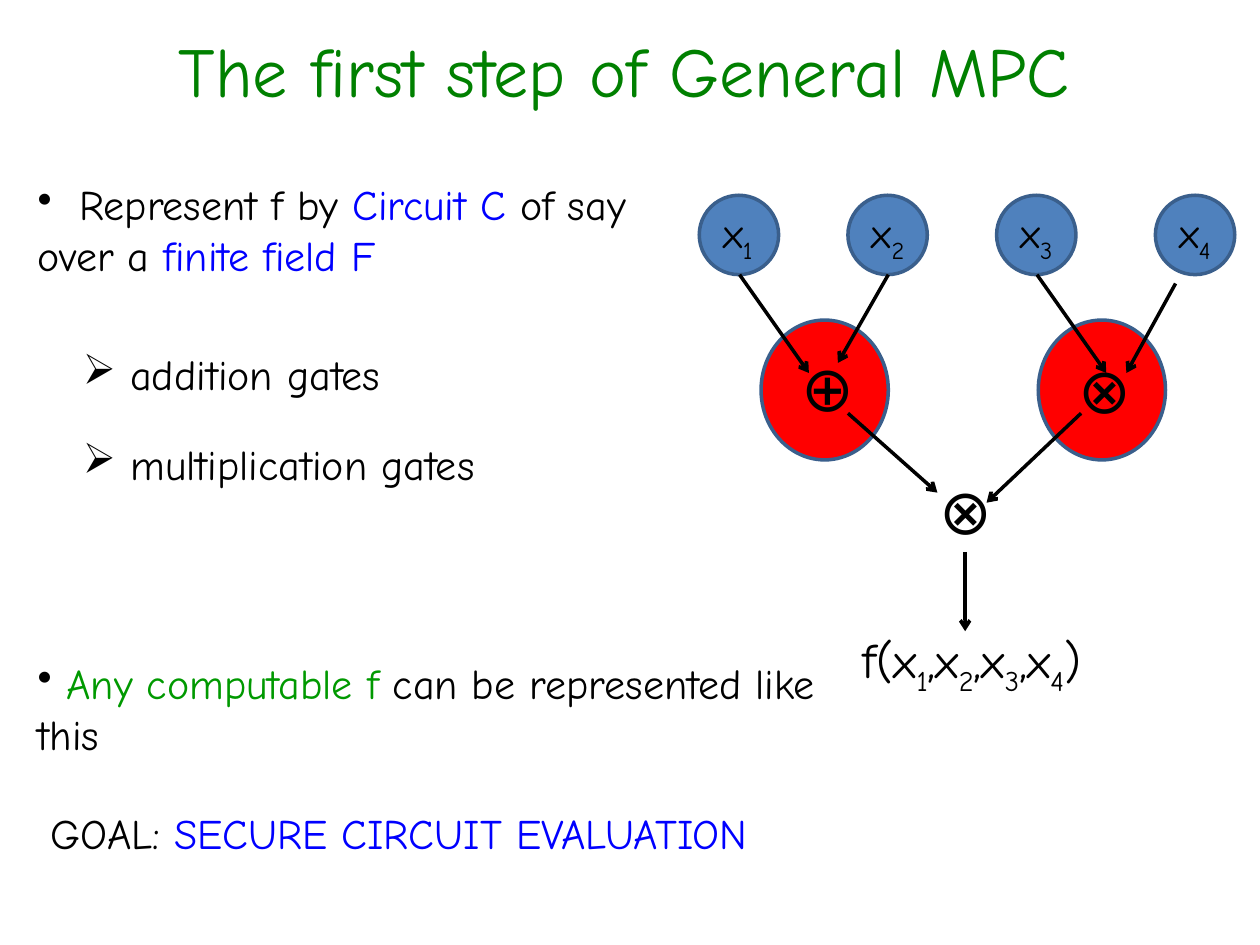
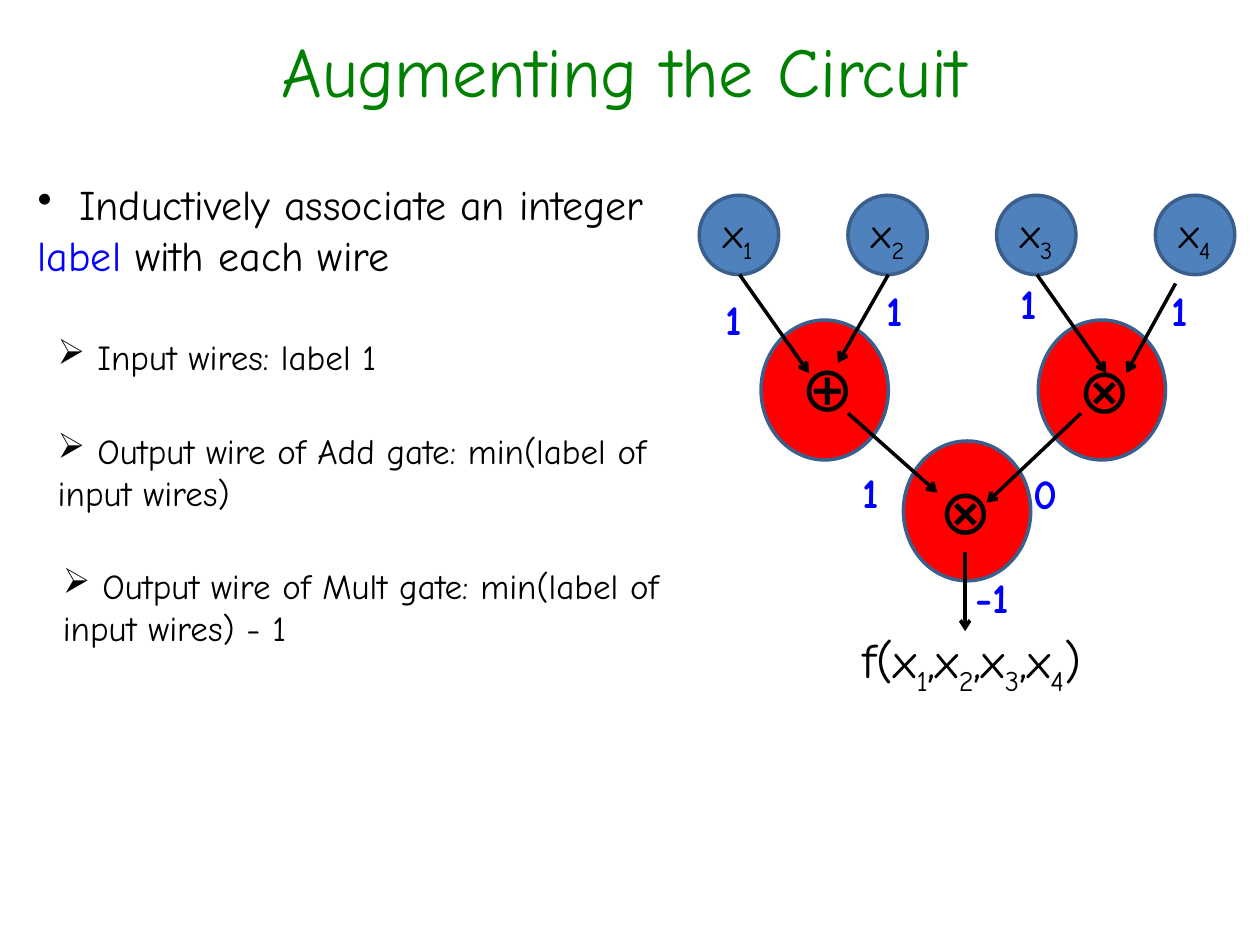
from lxml.etree import SubElement
from pptx import Presentation
from pptx.dml.color import RGBColor
from pptx.enum.shapes import MSO_CONNECTOR, MSO_SHAPE
from pptx.enum.text import PP_ALIGN
from pptx.oxml.ns import qn
from pptx.util import Inches, Pt

COLOURS = {
    "title": "008000", "ink": "000000", "blue": "0000FF", "green": "009900",
    "gate": "FF0000", "input": "4F81BD", "outline": "3A5F8C",
}
HAND, SYMBOL = "Comic Neue", "Calibri"

INPUT_LEFTS = [5.55 + 1.18 * i for i in range(3)] + [9.17]
INPUT_TOP, INPUT_SIZE = 1.55, 0.63
GATE_WIDTH, GATE_HEIGHT = 1.01, 1.11
TOP_GATES = [(8.24, 2.54), (6.04, 2.54)]
OUTPUT_GATE = (7.17, 3.5)
OPERATORS = [("⊕", 6.26, 2.72), ("⊗", 8.46, 2.73), ("⊗", 7.36, 3.69)]
WIRES = [
    ((5.87, 2.18), (6.42, 2.96)),
    ((7.05, 2.18), (6.65, 2.88)),
    ((8.23, 2.18), (8.78, 2.96)),
    ((9.33, 2.25), (8.94, 2.96)),
    ((6.73, 3.28), (7.44, 3.91)),
    ((8.58, 3.28), (7.83, 3.99)),
    ((7.66, 4.38), (7.66, 5.01)),
]
FORMULA = [("f(x", "ink"), ("1", "sub"), (",x", "ink"), ("2", "sub"), (",x", "ink"),
           ("3", "sub"), (",x", "ink"), ("4", "sub"), (")", "ink")]

SLIDES = [
    {
        "title": "The first step of General MPC",
        "gates": TOP_GATES,
        "labels": [],
        "notes": [
            ((0.2, 1.37, 5.12, 0.91), 24, "•",
             [("\tRepresent f by ", "ink"), ("Circuit C ", "blue"),
              ("of say over a ", "ink"), ("finite field F", "blue")]),
            ((0.56, 2.72, 4.88, 0.5), 24, "➢", [(" addition gates", "ink")]),
            ((0.56, 3.43, 4.88, 0.5), 24, "➢", [(" multiplication gates", "ink")]),
            ((0.2, 5.17, 6.46, 0.91), 24, "•",
             [(" ", "ink"), ("Any computable f", "green"),
              (" can be represented like this", "ink")]),
            ((0.3, 6.36, 7.49, 0.5), 24, None,
             [("GOAL: ", "ink"), ("SECURE CIRCUIT EVALUATION", "blue")]),
        ],
    },
    {
        "title": "Augmenting the Circuit",
        "gates": [OUTPUT_GATE] + TOP_GATES,
        "labels": [("1", 5.66, 2.28), ("1", 6.94, 2.21), ("1", 8, 2.15), ("1", 9.2, 2.21),
                   ("1", 6.75, 3.65), ("0", 8.1, 3.66), ("-1", 7.64, 4.49)],
        "notes": [
            ((0.2, 1.37, 5.12, 0.91), 24, "•",
             [("\tInductively associate an integer ", "ink"), ("label", "blue"),
              (" with each wire", "ink")]),
            ((0.36, 2.61, 4.88, 0.44), 20, "➢", [(" Input wires: label 1", "ink")]),
            ((0.36, 3.36, 4.88, 0.77), 20, "➢",
             [(" Output wire of Add gate: min(label of input wires)", "ink")]),
            ((0.4, 4.43, 5.43, 0.77), 20, "➢",
             [(" Output wire of Mult gate: min(label of input wires) - 1", "ink")]),
        ],
    },
]


def colour(key):
    return RGBColor.from_string(COLOURS[key])


def add_text(shapes, place, runs, size, face=HAND, base="ink", bold=False,
             bullet=None, align=PP_ALIGN.LEFT, wrap=True):
    frame = shapes.add_textbox(*map(Inches, place)).text_frame
    frame.word_wrap = wrap
    paragraph = frame.paragraphs[0]
    paragraph.alignment = align
    if bullet:
        properties = paragraph._p.get_or_add_pPr()
        properties.set("marL", "0")
        properties.set("indent", "0")
        SubElement(properties, qn("a:buChar"), char=bullet)
        if runs[0][0].startswith("\t"):
            stops = SubElement(properties, qn("a:tabLst"))
            SubElement(stops, qn("a:tab"), pos=str(Inches(0.33)), algn="l")
    font = paragraph.font
    font.name, font.size, font.bold = face, Pt(size), bold
    font.color.rgb = colour(base)
    for text, style in runs:
        run = paragraph.add_run()
        run.text = text
        if style == "sub":
            run.font._element.set("baseline", "-25000")
        elif style != base:
            run.font.color.rgb = colour(style)


def add_ellipse(shapes, left, top, width, height, fill):
    ellipse = shapes.add_shape(MSO_SHAPE.OVAL, *map(Inches, (left, top, width, height)))
    ellipse.shadow.inherit = False
    ellipse.fill.solid()
    ellipse.fill.fore_color.rgb = colour(fill)
    ellipse.line.color.rgb = colour("outline")
    ellipse.line.width = Pt(2)


def add_wire(shapes, start, end):
    wire = shapes.add_connector(MSO_CONNECTOR.STRAIGHT, *map(Inches, start + end))
    wire.line.color.rgb = colour("ink")
    wire.line.width = Pt(2)
    SubElement(wire.line._get_or_add_ln(), qn("a:tailEnd"), type="arrow")
    SubElement(wire._element.spPr, qn("a:effectLst"))


def add_circuit(shapes, gates, labels):
    for left, top in gates:
        add_ellipse(shapes, left, top, GATE_WIDTH, GATE_HEIGHT, "gate")
    for number, left in enumerate(INPUT_LEFTS, 1):
        node = shapes.add_group_shape().shapes
        add_ellipse(node, left, INPUT_TOP, INPUT_SIZE, INPUT_SIZE, "input")
        add_text(node, (left + 0.09, INPUT_TOP + 0.04, 0.54, 0.5),
                 [("x", "ink"), (str(number), "sub")], 24)
    for operator, left, top in OPERATORS:
        add_text(shapes, (left, top, 0.55, 0.71), [(operator, "ink")], 36, face=SYMBOL)
    for start, end in WIRES:
        add_wire(shapes, start, end)
    add_text(shapes, (6.75, 4.95, 2.64, 0.57), FORMULA, 28)
    for label, left, top in labels:
        width = 0.21 + 0.2 * len(label)
        add_text(shapes, (left, top, width, 0.5), [(label, "blue")], 24,
                 base="blue", bold=True, wrap=False)


def main():
    deck = Presentation()
    deck.slide_width, deck.slide_height = Inches(10), Inches(7.5)
    for content in SLIDES:
        shapes = deck.slides.add_slide(deck.slide_layouts[6]).shapes
        add_circuit(shapes, content["gates"], content["labels"])
        for place, size, bullet, runs in content["notes"]:
            add_text(shapes, place, runs, size, bullet=bullet)
        add_text(shapes, (0.08, 0.17, 9.75, 0.75), [(content["title"], "title")], 40,
                 base="title", align=PP_ALIGN.CENTER)
    deck.save("out.pptx")


if __name__ == "__main__":
    main()
